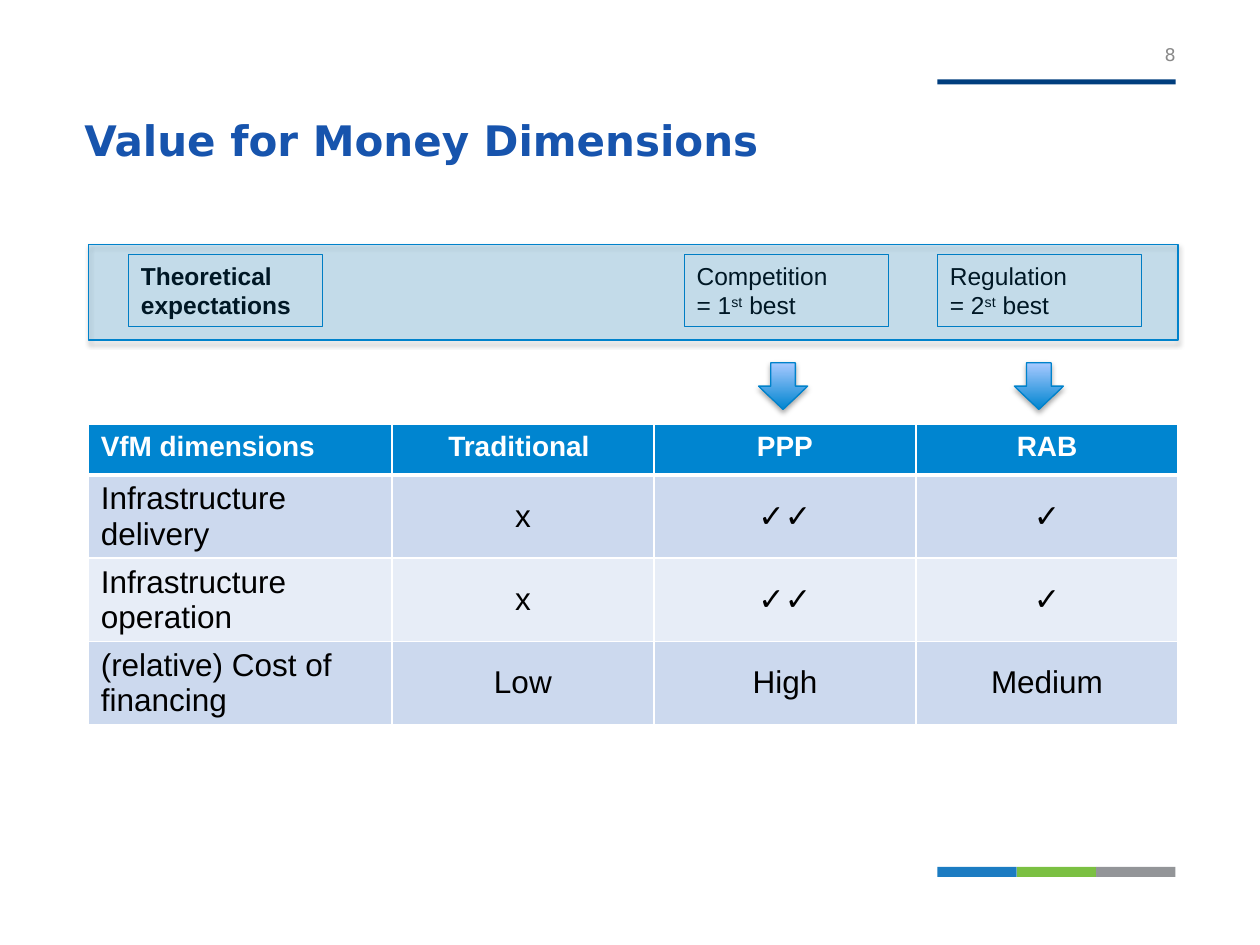
from lxml.etree import SubElement
from pptx import Presentation
from pptx.dml.color import RGBColor
from pptx.enum.shapes import MSO_SHAPE as Shape
from pptx.enum.text import MSO_ANCHOR as Anchor, PP_ALIGN as Align
from pptx.oxml import parse_xml
from pptx.oxml.ns import nsdecls, qn
from pptx.util import Pt

PX = 9144
BLUE, EDGE, PALE = "0085D0", "0082CB", "A7C9FF"


def px(*lengths):
    """Turn px lengths into EMU."""
    return [length * PX for length in lengths]


def color(value):
    """Turn a hex string into a colour."""
    return RGBColor.from_string(value)


def add_run(paragraph, text, size, font, ink, bold=False, raised=False):
    """Add one formatted run to a paragraph."""
    run = paragraph.add_run()
    run.text = text
    run.font.size, run.font.name, run.font.bold = Pt(size), font, bold
    run.font.color.rgb = color(ink)
    if raised:
        run._r.get_or_add_rPr().set("baseline", "30000")


def add_block(slide, kind, box, fill=None, line=None):
    """Add a preset shape without shadow."""
    block = slide.shapes.add_shape(kind, *px(*box))
    block.shadow.inherit = False
    if fill:
        block.fill.solid()
        block.fill.fore_color.rgb = color(fill)
    else:
        block.fill.background()
    if line:
        block.line.color.rgb = color(line)
        block.line.width = Pt(0.75)
    else:
        block.line.fill.background()
    return block


def cast_shadow(block):
    """Give a shape a soft shadow straight below."""
    effects = block._element.spPr.find(qn("a:effectLst"))
    effects.append(parse_xml(
        f'<a:outerShdw {nsdecls("a")} blurRad="39370" dist="22860" dir="5400000" rotWithShape="0">'
        '<a:srgbClr val="000000"><a:alpha val="35000"/></a:srgbClr></a:outerShdw>'))


def add_frame(slide, left, width):
    """Add the header rule and the three-colour footer bar."""
    add_block(slide, Shape.RECTANGLE, (left, 63, width, 4), "003E7E")
    part = width // 3
    for index, fill in enumerate(("1C7CC2", "7BC042", "939598")):
        add_block(slide, Shape.RECTANGLE, (left + index * part, 688, part, 8), fill)


def add_title(slide, box, text):
    """Place the title placeholder and fill it."""
    title = slide.shapes.title
    title.left, title.top, title.width, title.height = px(*box)
    frame = title.text_frame
    frame.margin_left = frame.margin_right = frame.margin_top = 0
    frame.margin_bottom = 8 * PX
    frame.vertical_anchor = Anchor.BOTTOM
    heading = frame.paragraphs[0]
    heading.alignment = Align.LEFT
    add_run(heading, text, 24, "DejaVu Sans", "1754AD", True)


def add_page_number(slide, box, number):
    """Add the page number above the header rule."""
    frame = slide.shapes.add_textbox(*px(*box)).text_frame
    frame.word_wrap = True
    frame.margin_left = frame.margin_right = frame.margin_top = frame.margin_bottom = 0
    frame.vertical_anchor = Anchor.BOTTOM
    frame.paragraphs[0].alignment = Align.RIGHT
    add_run(frame.paragraphs[0], number, 10, "DejaVu Sans", "898989")


def add_expectation(slide, box, lines, bold=False):
    """Add an outlined label whose lines are lists of text pieces."""
    frame = add_block(slide, Shape.RECTANGLE, box, line=BLUE).text_frame
    frame.word_wrap = True
    frame.vertical_anchor = Anchor.TOP
    for index, pieces in enumerate(lines):
        paragraph = frame.add_paragraph() if index else frame.paragraphs[0]
        paragraph.alignment = Align.JUSTIFY
        for piece in pieces:
            add_run(paragraph, piece, 14, "Arial", "000000", bold, piece == "st")


def add_arrow(slide, box):
    """Add a shaded arrow pointing down to the table."""
    arrow = add_block(slide, Shape.DOWN_ARROW, box, line=EDGE)
    arrow.fill.gradient()
    arrow.fill.gradient_angle = 90
    for stop, shade in zip(arrow.fill.gradient_stops, (BLUE, PALE)):
        stop.color.rgb = color(shade)
    cast_shadow(arrow)


def add_expectations(slide, left, top, width, height):
    """Add the labels, the arrows and the translucent band over the labels."""
    label_top = top + 8
    add_expectation(slide, (left + 32, label_top, 154, 57), [["Theoretical expectations"]], True)
    for offset, arrow_offset, name, rank in ((473, 532, "Competition", "1"), (674, 735, "Regulation", "2")):
        add_expectation(slide, (left + offset, label_top, 162, 57), [[name], [f"= {rank}", "st", " best"]])
        add_arrow(slide, (left + arrow_offset, top + 94, 39, 37))
    band = add_block(slide, Shape.RECTANGLE, (left, top, width, height), BLUE, EDGE)
    tint = band._element.spPr.find(qn("a:solidFill"))[0]
    SubElement(tint, qn("a:alpha")).set("val", "18000")
    cast_shadow(band)


def add_borders(cell, row):
    """Draw white cell borders, thicker below the header."""
    properties = cell._tc.get_or_add_tcPr()
    thick = {0: "lnB", 1: "lnT"}.get(row)
    for side in ("lnL", "lnR", "lnT", "lnB"):
        border = SubElement(properties, qn(f"a:{side}"), w=str(Pt(3 if side == thick else 1)))
        SubElement(SubElement(border, qn("a:solidFill")), qn("a:srgbClr"), val="FFFFFF")


def add_comparison(slide, left, top, widths, heights, rows):
    """Add the table that compares the three delivery models."""
    box = px(left, top, sum(widths), sum(heights))
    table = slide.shapes.add_table(len(rows), len(widths), *box).table
    for column, width in zip(table.columns, widths):
        column.width = width * PX
    for row, (texts, height) in enumerate(zip(rows, heights)):
        table.rows[row].height = height * PX
        header = row == 0
        for column, text in enumerate(texts):
            cell = table.cell(row, column)
            add_borders(cell, row)
            cell.fill.solid()
            cell.fill.fore_color.rgb = color(BLUE if header else "CCD9EE" if row % 2 else "E7EDF7")
            cell.vertical_anchor = Anchor.TOP if header else Anchor.MIDDLE
            paragraph = cell.text_frame.paragraphs[0]
            paragraph.alignment = Align.CENTER if column else Align.LEFT
            add_run(paragraph, text, 16 if header else 18, "Arial", "FFFFFF" if header else "000000", header)


def main():
    """Build and save the slide."""
    deck = Presentation()
    deck.slide_width, deck.slide_height = px(1000, 750)
    slide = deck.slides.add_slide(deck.slide_layouts[5])
    add_frame(slide, 744, 189)
    add_title(slide, (67, 29, 865, 110), "Value for Money Dimensions")
    add_comparison(slide, 70, 337, [241, 208, 208, 208], [40, 66, 66, 66], [
        ("VfM dimensions", "Traditional ", "PPP", "RAB"),
        ("Infrastructure delivery", "x", "✓✓", "✓"),
        ("Infrastructure operation", "x", "✓✓", "✓"),
        ("(relative) Cost of financing", "Low", "High", "Medium"),
    ])
    add_page_number(slide, (884, 12, 49, 40), "8")
    add_expectations(slide, 70, 194, 865, 76)
    deck.save("out.pptx")


if __name__ == "__main__":
    main()
